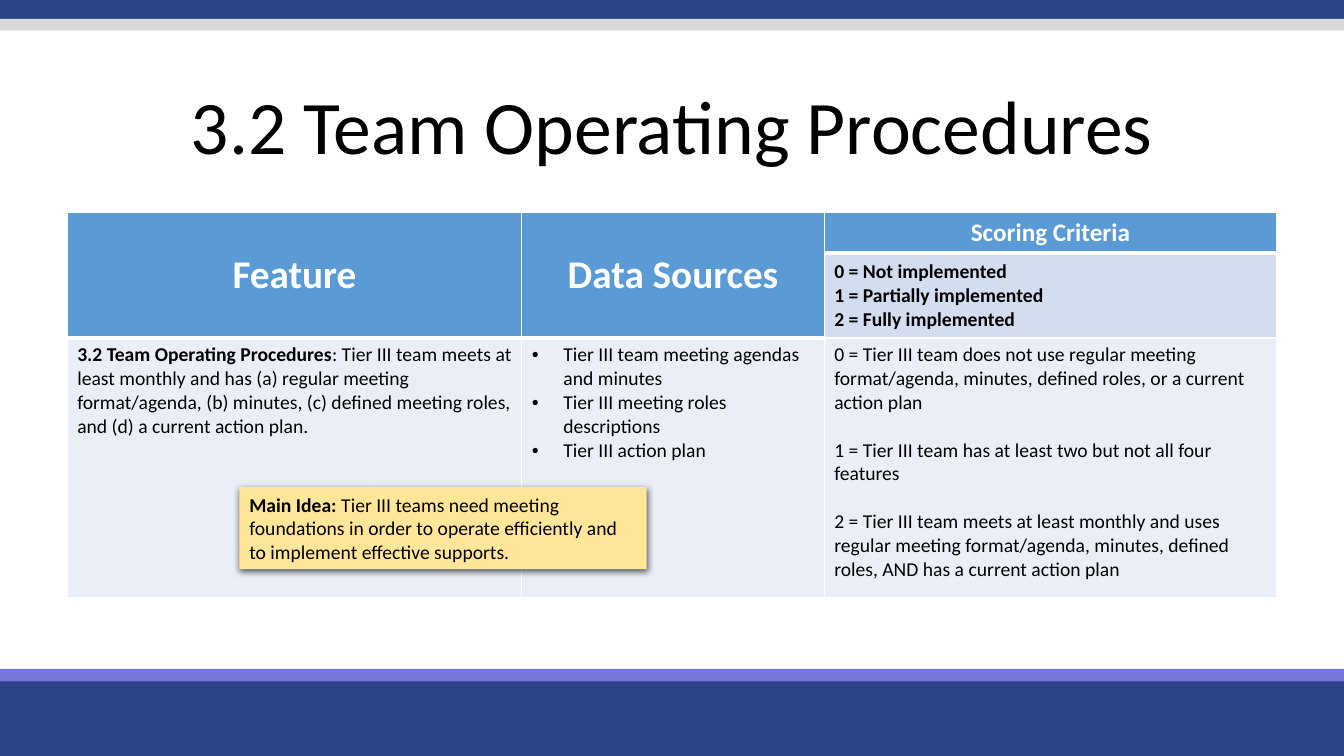
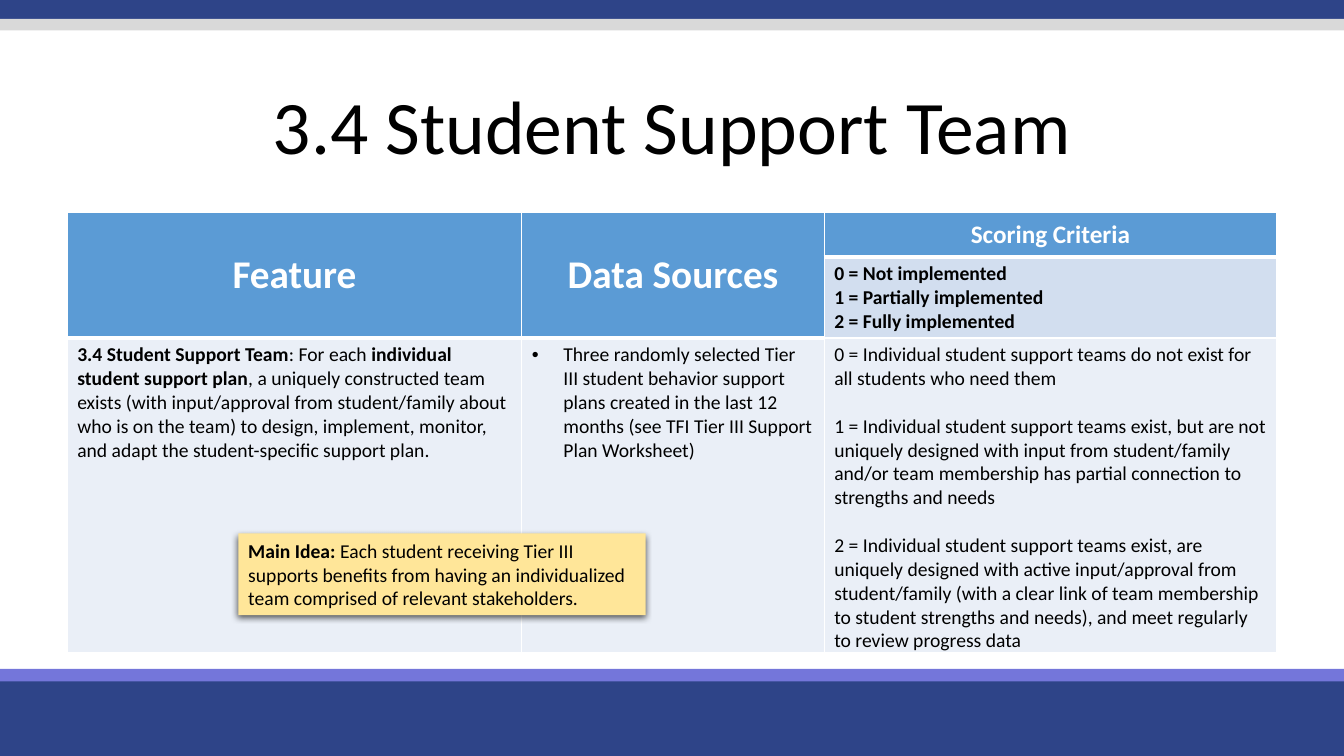
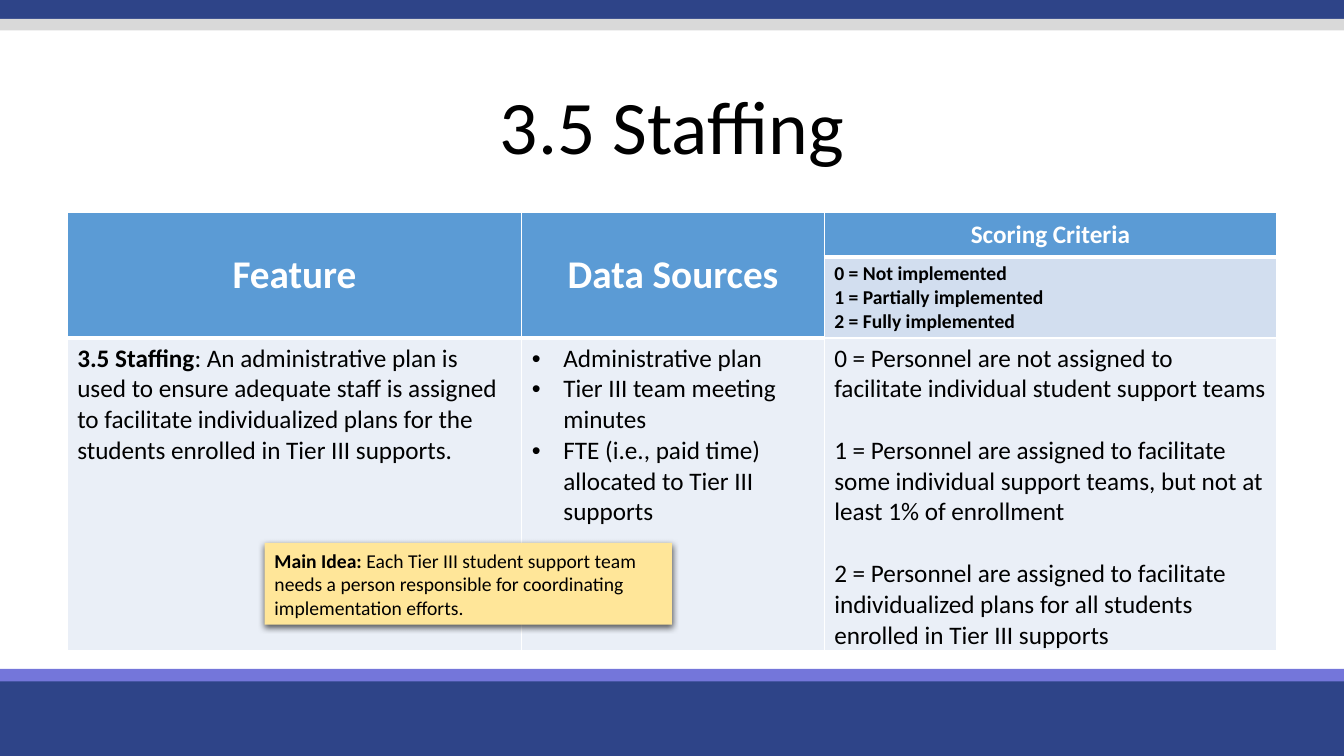
"""Build three scoring-table slides on Tier III team features."""
from dataclasses import dataclass

from lxml.etree import SubElement
from pptx import Presentation
from pptx.dml.color import RGBColor
from pptx.enum.shapes import MSO_SHAPE
from pptx.enum.text import MSO_ANCHOR, MSO_AUTO_SIZE, PP_ALIGN
from pptx.oxml.ns import qn
from pptx.util import Emu, Pt

PX = 9525
WIDTH, HEIGHT = 1280, 720
FONT = "Calibri"
BLACK, WHITE = "000000", "FFFFFF"
NAVY, VIOLET, GREY = "2E4488", "7476DA", "D9D9D9"
HEADER, LEGEND, BODY, NOTE = "5B9BD5", "D2DEEF", "EAEFF7", "FFE699"
TABLE_LEFT, TABLE_TOP = 64, 202
COLUMNS = (433, 288, 431)
HEADER_ROWS = (2, 2, 1)
NOTE_WIDTH, NOTE_HEIGHT = 388, 78
INDENT = 30
LEVELS = ("0 = Not implemented", "1 = Partially implemented", "2 = Fully implemented")


@dataclass(frozen=True)
class Band:
    """A full-width stripe."""
    top: int
    height: int
    color: str


@dataclass(frozen=True)
class Feature:
    """One scored feature; bold and plain pieces alternate in its description."""
    title: str
    description: tuple[str, ...]
    sources: tuple[str, ...]
    criteria: tuple[str, ...]
    main_idea: str
    note_at: tuple[int, int]
    rows: tuple[int, int, int]
    size: int = 14


BANDS = (
    Band(643, 77, NAVY),
    Band(637, 12, VIOLET),
    Band(0, 18, NAVY),
    Band(18, 11, GREY),
)

FEATURES = (
    Feature(
        "3.2 Team Operating Procedures",
        ("3.2 Team Operating Procedures",
         ": Tier III team meets at least monthly and has (a) regular meeting format/agenda, "
         "(b) minutes, (c) defined meeting roles, and (d) a current action plan."),
        ("Tier III team meeting agendas and minutes",
         "Tier III meeting roles descriptions",
         "Tier III action plan"),
        ("0 = Tier III team does not use regular meeting format/agenda, minutes, "
         "defined roles, or a current action plan",
         "1 = Tier III team has at least two but not all four features",
         "2 = Tier III team meets at least monthly and uses regular meeting format/agenda, "
         "minutes, defined roles, AND has a current action plan"),
        "Tier III teams need meeting foundations in order to operate efficiently "
        "and to implement effective supports.",
        (228, 464), (39, 81, 247),
    ),
    Feature(
        "3.4 Student Support Team",
        ("3.4 Student Support Team", ": For each ", "individual student support plan",
         ", a uniquely constructed team exists (with input/approval from student/family "
         "about who is on the team) to design, implement, monitor, and adapt the "
         "student-specific support plan."),
        ("Three randomly selected Tier III student behavior support plans created in the "
         "last 12 months (see TFI Tier III Support Plan Worksheet)",),
        ("0 = Individual student support teams do not exist for all students who need them",
         "1 = Individual student support teams exist, but are not uniquely designed with "
         "input from student/family and/or team membership has partial connection to "
         "strengths and needs",
         "2 = Individual student support teams exist, are uniquely designed with active "
         "input/approval from student/family (with a clear link of team membership to "
         "student strengths and needs), and meet regularly to review progress data"),
        "Each student receiving Tier III supports benefits from having an individualized "
        "team comprised of relevant stakeholders.",
        (227, 508), (43, 77, 300),
    ),
    Feature(
        "3.5 Staffing",
        ("3.5 Staffing",
         ": An administrative plan is used to ensure adequate staff is assigned to "
         "facilitate individualized plans for the students enrolled in Tier III supports."),
        ("Administrative plan",
         "Tier III team meeting minutes",
         "FTE (i.e., paid time) allocated to Tier III supports"),
        ("0 = Personnel are not assigned to facilitate individual student support teams",
         "1 = Personnel are assigned to facilitate some individual support teams, "
         "but not at least 1% of enrollment",
         "2 = Personnel are assigned to facilitate individualized plans for all students "
         "enrolled in Tier III supports"),
        "Each Tier III student support team needs a person responsible for coordinating "
        "implementation efforts.",
        (252, 517), (43, 77, 298), 18,
    ),
)


def px(*values: int) -> list[Emu]:
    """Turn pixel lengths into EMU."""
    return [Emu(v * PX) for v in values]


def rgb(color: str) -> RGBColor:
    """Turn a hex string into a colour."""
    return RGBColor.from_string(color)


def style_run(r, size: int, color: str = BLACK, bold: bool = False) -> None:
    """Format one run."""
    r.font.name, r.font.size, r.font.bold = FONT, Pt(size), bold
    r.font.color.rgb = rgb(color)


def write_lines(tf, lines, size: int, color: str = BLACK, bold: bool = False,
                align=PP_ALIGN.LEFT, gap: float = 0) -> None:
    """Write one paragraph per line, with a gap between them."""
    tf.text = "\n".join(lines)
    for i, p in enumerate(tf.paragraphs):
        p.alignment = align
        if gap and i:
            p.space_before = Pt(gap)
        for r in p.runs:
            style_run(r, size, color, bold)


def write_pieces(tf, pieces, size: int) -> None:
    """Write one paragraph whose runs alternate bold and plain."""
    p = tf.paragraphs[0]
    p.alignment = PP_ALIGN.LEFT
    for i, piece in enumerate(pieces):
        r = p.add_run()
        r.text = piece
        style_run(r, size, bold=i % 2 == 0)


def add_bullets(tf) -> None:
    """Give every paragraph a hanging bullet."""
    for p in tf.paragraphs:
        pPr = p._p.get_or_add_pPr()
        pPr.set("marL", str(INDENT * PX))
        pPr.set("indent", str(-INDENT * PX))
        SubElement(pPr, qn("a:buFont"), typeface="Arial")
        SubElement(pPr, qn("a:buChar"), char="•")


def add_rect(s, left: int, top: int, width: int, height: int, color: str):
    """Draw a plain filled rectangle."""
    sp = s.shapes.add_shape(MSO_SHAPE.RECTANGLE, *px(left, top, width, height))
    sp.shadow.inherit = False
    sp.fill.solid()
    sp.fill.fore_color.rgb = rgb(color)
    sp.line.fill.background()
    return sp


def add_title(s, title: str) -> None:
    """Write the centred slide title."""
    tf = s.shapes.add_textbox(*px(0, 66, WIDTH, 116)).text_frame
    tf.word_wrap = True
    tf.vertical_anchor = MSO_ANCHOR.MIDDLE
    write_lines(tf, [title], 54, align=PP_ALIGN.CENTER)
    tf.paragraphs[0].line_spacing = 0.9


def style_cell(cell, row: int, col: int) -> None:
    """Set the borders, fill and anchor of a cell by its place in the grid."""
    header_rows = HEADER_ROWS[col]
    top = 3 if row == header_rows else 1
    bottom = 3 if row < header_rows else 1
    tcPr = cell._tc.get_or_add_tcPr()
    for side, width in zip("LRTB", (1, 1, top, bottom)):
        ln = SubElement(tcPr, qn(f"a:ln{side}"), w=str(Pt(width)))
        SubElement(SubElement(ln, qn("a:solidFill")), qn("a:srgbClr"), val=WHITE)
    cell.fill.solid()
    cell.fill.fore_color.rgb = rgb(
        HEADER if row < header_rows else LEGEND if row == 1 else BODY)
    if row < 2:
        cell.vertical_anchor = MSO_ANCHOR.MIDDLE
    else:
        cell.margin_bottom = 0


def add_scoring_table(s, feature: Feature) -> None:
    """Draw the table of feature, data sources and scoring criteria."""
    tbl = s.shapes.add_table(
        3, 3, *px(TABLE_LEFT, TABLE_TOP, sum(COLUMNS), sum(feature.rows))).table
    tbl.first_row = tbl.horz_banding = False
    for column, width in zip(tbl.columns, px(*COLUMNS)):
        column.width = width
    for row, height in zip(tbl.rows, px(*feature.rows)):
        row.height = height
    for row in range(3):
        for col in range(3):
            style_cell(tbl.cell(row, col), row, col)
    for col in (0, 1):
        tbl.cell(0, col).merge(tbl.cell(1, col))

    headings = (("Feature", 28), ("Data Sources", 28), ("Scoring Criteria", 18))
    for col, (heading, size) in enumerate(headings):
        write_lines(tbl.cell(0, col).text_frame, [heading], size, WHITE, True,
                    PP_ALIGN.CENTER)
    write_lines(tbl.cell(1, 2).text_frame, LEVELS, 14, bold=True)

    description, sources, criteria = (tbl.cell(2, col).text_frame for col in range(3))
    write_pieces(description, feature.description, feature.size)
    write_lines(sources, feature.sources, feature.size)
    add_bullets(sources)
    write_lines(criteria, feature.criteria, feature.size, gap=round(feature.size * 1.22))


def add_main_idea(s, feature: Feature) -> None:
    """Draw the shadowed note with the main idea."""
    sp = add_rect(s, *feature.note_at, NOTE_WIDTH, NOTE_HEIGHT, NOTE)
    shadow = SubElement(sp._element.spPr.find(qn("a:effectLst")), qn("a:outerShdw"),
                        blurRad=str(Pt(4.5)), dist=str(Pt(1.5)), dir="5400000",
                        algn="ctr", rotWithShape="0")
    color = SubElement(shadow, qn("a:srgbClr"), val=BLACK)
    SubElement(color, qn("a:alpha"), val="63000")
    tf = sp.text_frame
    tf.word_wrap = True
    tf.auto_size = MSO_AUTO_SIZE.SHAPE_TO_FIT_TEXT
    tf.vertical_anchor = MSO_ANCHOR.MIDDLE
    write_pieces(tf, ("Main Idea: ", feature.main_idea), 14)


def add_feature_slide(prs, feature: Feature) -> None:
    """Build one slide."""
    s = prs.slides.add_slide(prs.slide_layouts[6])
    for band in BANDS:
        add_rect(s, 0, band.top, WIDTH, band.height, band.color)
    add_title(s, feature.title)
    add_scoring_table(s, feature)
    add_main_idea(s, feature)


def main() -> None:
    """Build and save the presentation."""
    prs = Presentation()
    prs.slide_width, prs.slide_height = px(WIDTH, HEIGHT)
    for feature in FEATURES:
        add_feature_slide(prs, feature)
    prs.save("out.pptx")


if __name__ == "__main__":
    main()
